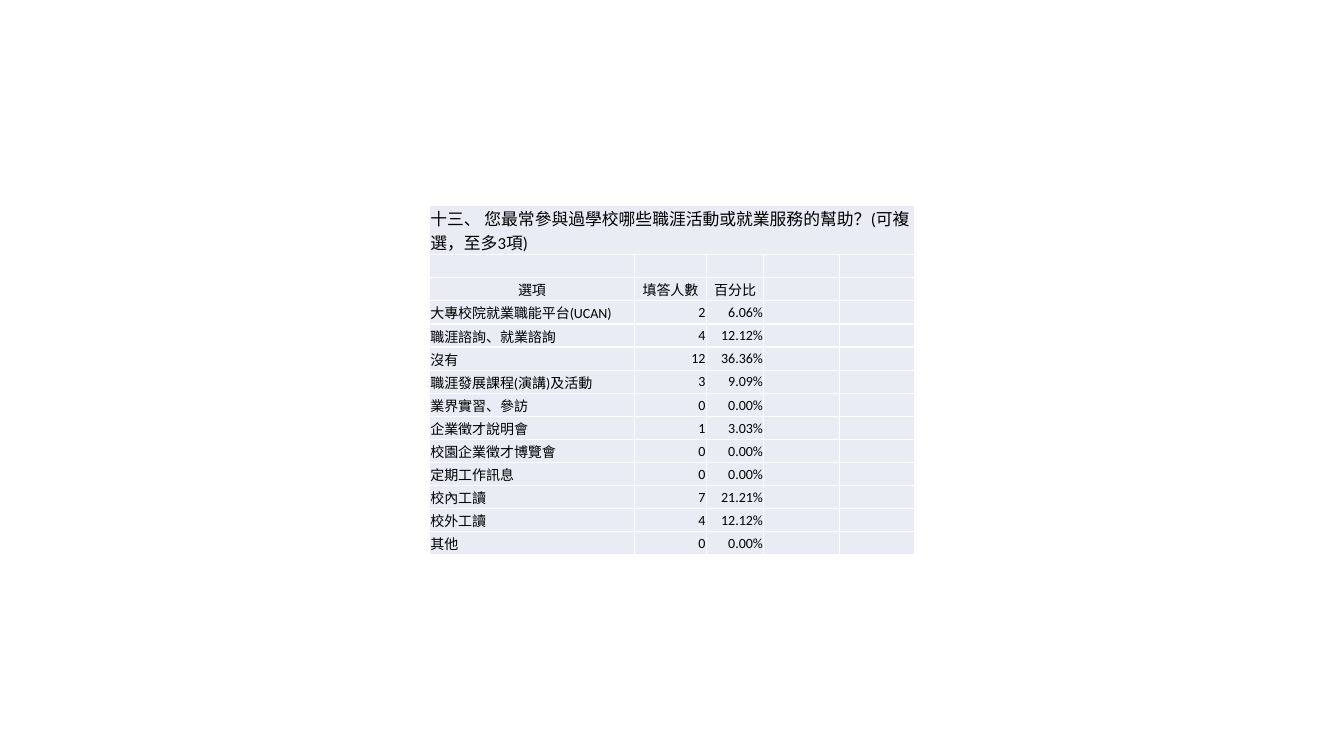
from typing import NamedTuple

from lxml.etree import SubElement
from pptx import Presentation
from pptx.dml.color import RGBColor
from pptx.enum.text import MSO_ANCHOR as Anchor, PP_ALIGN as Align
from pptx.oxml.ns import qn
from pptx.table import Table, _Cell as Cell
from pptx.util import Pt

BLACK = RGBColor(0x00, 0x00, 0x00)
WHITE = RGBColor(0xFF, 0xFF, 0xFF)
LAVENDER = RGBColor(0xE9, 0xEB, 0xF5)
FONT = "Calibri"

LEFT, TOP = 306.7, 146.4
QUESTION_HEIGHT, ROW_HEIGHT = 33, 16.5
COLUMN_WIDTHS = (146.5, 51.4, 41, 54, 54)


class Answer(NamedTuple):
    option: str
    count: str
    share: str


QUESTION = "十三、 您最常參與過學校哪些職涯活動或就業服務的幫助？(可複選，至多3項)"
HEADINGS = Answer("選項", "填答人數", "百分比")
ANSWERS = (
    Answer("大專校院就業職能平台(UCAN)", "2", "6.06%"),
    Answer("職涯諮詢、就業諮詢", "4", "12.12%"),
    Answer("沒有", "12", "36.36%"),
    Answer("職涯發展課程(演講)及活動", "3", "9.09%"),
    Answer("業界實習、參訪", "0", "0.00%"),
    Answer("企業徵才說明會", "1", "3.03%"),
    Answer("校園企業徵才博覽會", "0", "0.00%"),
    Answer("定期工作訊息", "0", "0.00%"),
    Answer("校內工讀", "7", "21.21%"),
    Answer("校外工讀", "4", "12.12%"),
    Answer("其他", "0", "0.00%"),
)
HEADING_ROW = 2
FIRST_ANSWER_ROW = 3


def style_cell(cell: Cell) -> None:
    """Give a cell its margins, white borders, fill and small line height."""
    cell.margin_left = cell.margin_top = cell.margin_right = Pt(0.7)
    cell.margin_bottom = Pt(0)
    cell.vertical_anchor = Anchor.MIDDLE
    properties = cell._tc.get_or_add_tcPr()
    for side in ("a:lnL", "a:lnR", "a:lnT", "a:lnB"):
        line = SubElement(properties, qn(side), w=str(Pt(1)))
        line_fill = SubElement(line, qn("a:solidFill"))
        SubElement(line_fill, qn("a:srgbClr"), val=str(WHITE))
    cell.fill.solid()
    cell.fill.fore_color.rgb = LAVENDER
    # Empty cells keep the row height only with a small end-of-paragraph size
    paragraph = cell.text_frame.paragraphs[0]
    SubElement(paragraph._p, qn("a:endParaRPr"), sz="1000")


def write_text(cell: Cell, text: str, *, size: float = 10,
               align: Align = Align.LEFT) -> None:
    paragraph = cell.text_frame.paragraphs[0]
    paragraph.alignment = align
    run = paragraph.add_run()
    run.text = text
    run.font.name = FONT
    run.font.size = Pt(size)
    run.font.color.rgb = BLACK


def write_row(table: Table, row: int, answer: Answer, aligns: tuple[Align, ...]) -> None:
    for column, (text, align) in enumerate(zip(answer, aligns)):
        write_text(table.cell(row, column), text, align=align)


def main() -> None:
    presentation = Presentation()
    presentation.slide_width, presentation.slide_height = Pt(960), Pt(540)
    slide = presentation.slides.add_slide(presentation.slide_layouts[6])

    # Table frame
    row_heights = [QUESTION_HEIGHT] + [ROW_HEIGHT] * (len(ANSWERS) + HEADING_ROW)
    table = slide.shapes.add_table(
        len(row_heights), len(COLUMN_WIDTHS), Pt(LEFT), Pt(TOP),
        Pt(sum(COLUMN_WIDTHS)), Pt(sum(row_heights))).table
    table.first_row = table.horz_banding = False
    for column, width in zip(table.columns, COLUMN_WIDTHS):
        column.width = Pt(width)
    for row, height in zip(table.rows, row_heights):
        row.height = Pt(height)
    for cell in table.iter_cells():
        style_cell(cell)

    # Question across the full width
    question = table.cell(0, 0)
    question.merge(table.cell(0, len(COLUMN_WIDTHS) - 1))
    write_text(question, QUESTION, size=12)

    # Headings and answers
    write_row(table, HEADING_ROW, HEADINGS, (Align.CENTER,) * 3)
    for row, answer in enumerate(ANSWERS, FIRST_ANSWER_ROW):
        write_row(table, row, answer, (Align.LEFT, Align.RIGHT, Align.RIGHT))

    presentation.save("out.pptx")


if __name__ == "__main__":
    main()
